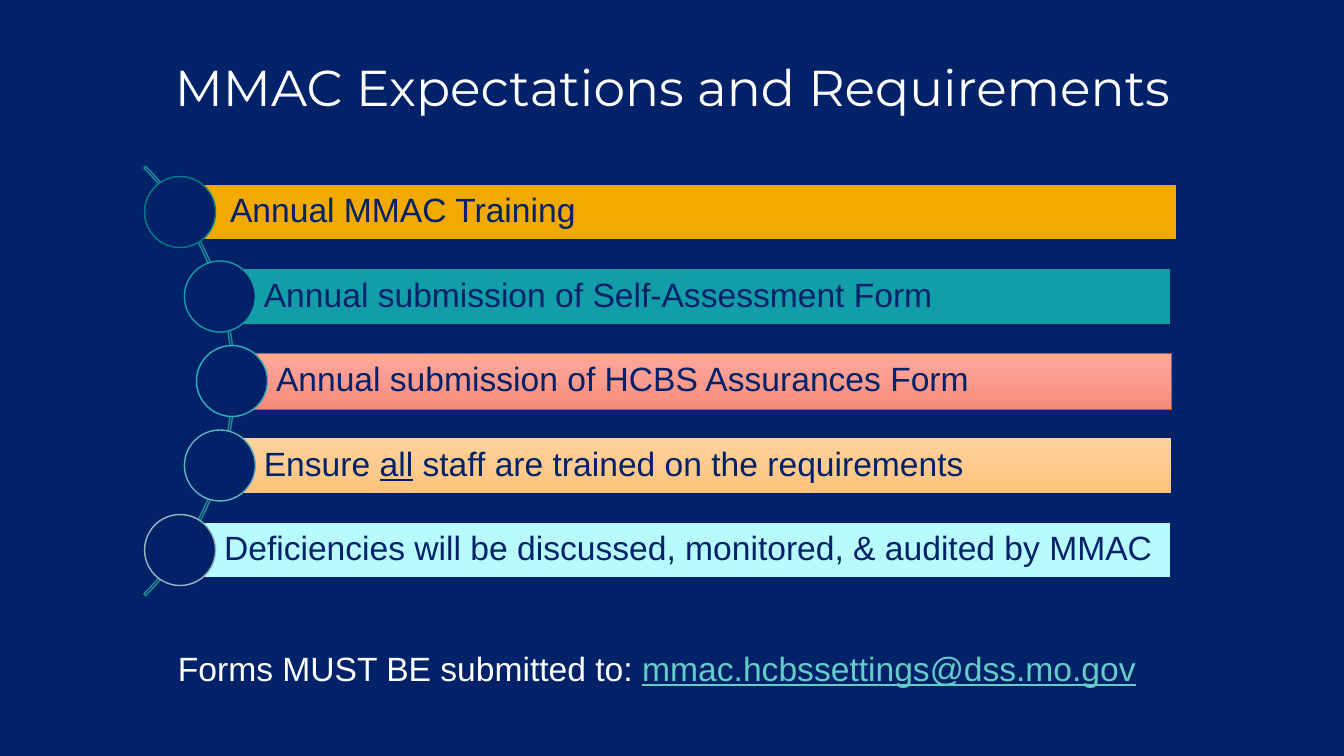
"""Build the slide of MMAC expectations: five bars strung along an arc."""
from math import sqrt

from pptx import Presentation
from pptx.dml.color import RGBColor
from pptx.enum.shapes import MSO_SHAPE
from pptx.enum.text import MSO_ANCHOR, PP_ALIGN
from pptx.util import Pt

COLORS = {
    "navy": "012169", "white": "FFFFFF", "arc": "228E97", "link": "64CCC9",
    "gold": "F2A900", "teal": "129DA8", "ice": "B7FBFF", "orange": "E35205",
    "coral_top": "FFA99D", "coral_bottom": "F68C7C",
    "peach_top": "FFD29E", "peach_bottom": "FEC37C",
    "ring_1": "007F87", "ring_3": "2DB3C0", "ring_4": "61B6BF", "ring_5": "95B9BE",
}
TITLE = "MMAC Expectations and Requirements"
# text runs (text, underlined), fill colours, outline, outline width, ring, shift in px
BARS = [
    ([("Annual MMAC Training", False)], ["gold"], "navy", 1.5, "ring_1", 6),
    ([("Annual submission of Self-Assessment Form", False)],
     ["teal"], "navy", 1, "teal", 0),
    ([("Annual submission of HCBS Assurances Form", False)],
     ["coral_top", "coral_bottom"], "orange", 0.5, "ring_3", 0),
    ([("Ensure ", False), ("all", True), (" staff are trained on the requirements", False)],
     ["peach_top", "peach_bottom"], "navy", 0.5, "ring_4", 0),
    ([("Deficiencies will be discussed, monitored, & audited by MMAC", False)],
     ["ice"], "navy", 1, "ring_5", 0),
]
CONTACT = [("Forms MUST BE submitted to: ", "white"), ("mmac.hcbssettings@dss.mo.gov", "link")]

PX = 914400 / 100.8
ARC_X, ARC_Y, ARC_SIZE, RADIUS = -69, 381, 607, 301
STEP, BAR_HEIGHT, BAR_RIGHT, CIRCLE = 84.5, 56, 1171, 71


def px(*lengths):
    return [round(length * PX) for length in lengths]


def rgb(name):
    return RGBColor.from_string(COLORS[name])


def set_font(font, name, size, color):
    font.name, font.size = name, Pt(size)
    font.color.rgb = rgb(color)


def add_outlined(slide, kind, area, fills, line, width):
    shape = slide.shapes.add_shape(kind, *px(*area))
    shape.shadow.inherit = False
    if len(fills) == 1:
        shape.fill.solid()
        shape.fill.fore_color.rgb = rgb(fills[0])
    else:
        shape.fill.gradient()
        shape.fill.gradient_angle = 270
        for stop, name, position in zip(shape.fill.gradient_stops, fills, (0, 1)):
            stop.color.rgb = rgb(name)
            stop.position = position
    shape.line.color.rgb = rgb(line)
    shape.line.width = Pt(width)
    return shape


def add_title(slide):
    title = slide.shapes.title
    title.left, title.top, title.width, title.height = px(93, 41, 1159, 98)
    frame = title.text_frame
    frame.text = TITLE
    frame.vertical_anchor = MSO_ANCHOR.MIDDLE
    para = frame.paragraphs[0]
    para.alignment, para.line_spacing = PP_ALIGN.CENTER, 0.9
    set_font(para.font, "Montserrat", 36, "white")


def add_arc(slide):
    area = (ARC_X - ARC_SIZE / 2, ARC_Y - ARC_SIZE / 2, ARC_SIZE, ARC_SIZE)
    arc = add_outlined(slide, MSO_SHAPE.BLOCK_ARC, area, ["navy"], "arc", 1)
    arc.fill.background()
    for index, value in enumerate((189, 27, 0.004)):
        arc.adjustments[index] = value


def add_bar(slide, index, runs, fills, line, width, ring, shift):
    rise = (index - len(BARS) // 2) * STEP
    center_x, center_y = ARC_X + sqrt(RADIUS ** 2 - rise ** 2), ARC_Y + rise
    area = (center_x + shift, center_y - BAR_HEIGHT / 2, BAR_RIGHT - center_x, BAR_HEIGHT)
    bar = add_outlined(slide, MSO_SHAPE.RECTANGLE, area, fills, line, width)
    frame = bar.text_frame
    frame.word_wrap, frame.vertical_anchor = True, MSO_ANCHOR.MIDDLE
    (frame.margin_left, frame.margin_top,
     frame.margin_right, frame.margin_bottom) = px(44, 7, 7, 7)
    para = frame.paragraphs[0]
    para.alignment, para.line_spacing = PP_ALIGN.LEFT, 0.9
    set_font(para.font, "Arial", 24, "navy")
    for text, underlined in runs:
        span = para.add_run()
        span.text = text
        set_font(span.font, "Arial", 24, "navy")
        if underlined:
            span.font.underline = True
    area = (center_x - CIRCLE / 2, center_y - CIRCLE / 2, CIRCLE, CIRCLE)
    add_outlined(slide, MSO_SHAPE.OVAL, area, ["navy"], ring, 1)


def add_contact(slide):
    box = slide.shapes.add_textbox(*px(168, 643, 979, 50))
    box.text_frame.word_wrap = True
    para = box.text_frame.paragraphs[0]
    for text, color in CONTACT:
        span = para.add_run()
        span.text = text
        set_font(span.font, "Arial", 24, color)
        span.font.underline = color == "link"


def main():
    deck = Presentation()
    deck.slide_width, deck.slide_height = px(1344, 756)
    slide = deck.slides.add_slide(deck.slide_layouts[5])
    slide.background.fill.solid()
    slide.background.fill.fore_color.rgb = rgb("navy")
    add_title(slide)
    add_arc(slide)
    for index, bar in enumerate(BARS):
        add_bar(slide, index, *bar)
    add_contact(slide)
    deck.save("out.pptx")


if __name__ == "__main__":
    main()
